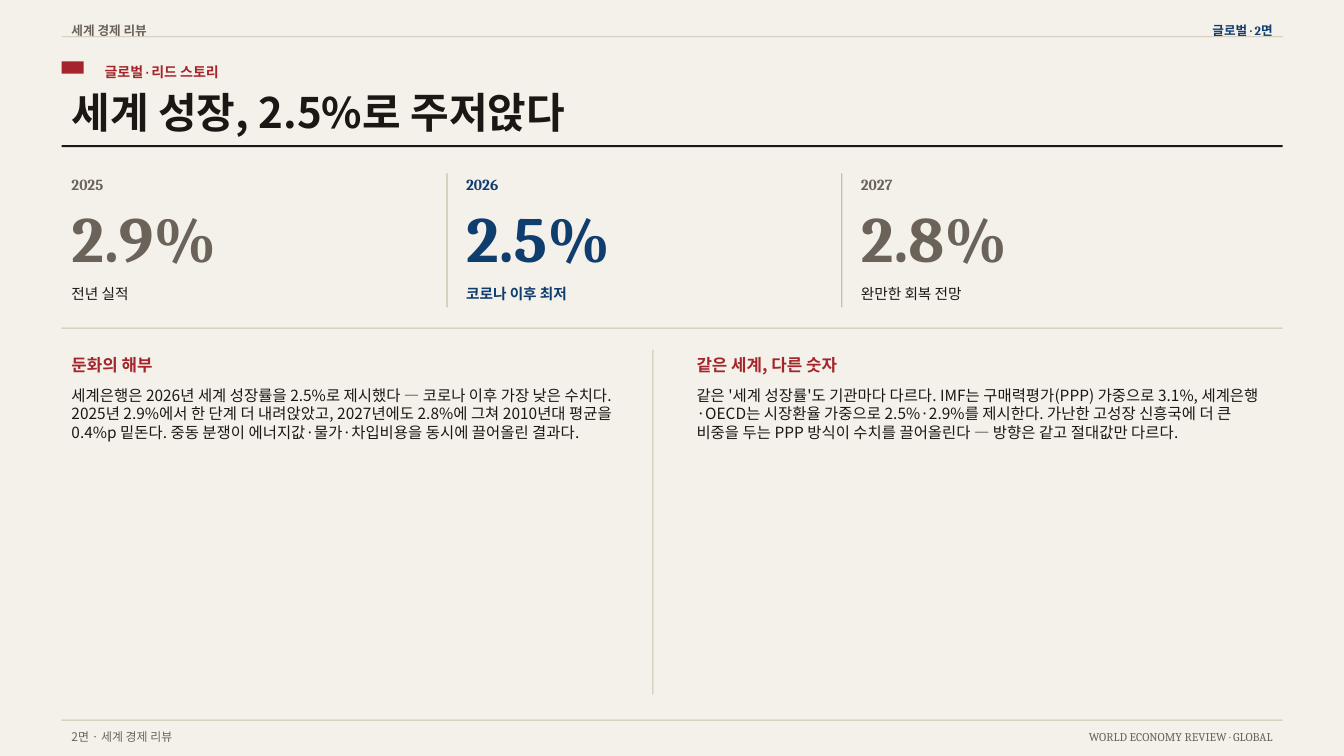
"""Builds the lead-story page of a world economy review."""
from pptx import Presentation
from pptx import util as u
from pptx.dml.color import RGBColor
from pptx.enum import shapes, text

PAPER = RGBColor(0xF4, 0xF1, 0xEA)
RULE = RGBColor(0xC9, 0xC0, 0xAE)
INK = RGBColor(0x1A, 0x17, 0x14)
GREY = RGBColor(0x6B, 0x63, 0x59)
NAVY = RGBColor(0x0F, 0x3D, 0x6E)
RED = RGBColor(0xA4, 0x26, 0x2C)
SERIF, SANS = "Cambria", "Noto Sans CJK KR"

WIDTH, HEIGHT = u.Inches(13.33), u.Inches(7.5)
LEFT, SPAN = 4.58, 90.85
RIGHT = LEFT + SPAN
STAT_PITCH = 29.37
HAIR_W, HAIR_H = 0.08, 0.13

STATS = [
    ("2025", "2.9%", "전년 실적", 6.3, False),
    ("2026", "2.5%", "코로나 이후 최저", 10.05, True),
    ("2027", "2.8%", "완만한 회복 전망", 10.05, False),
]
STORIES = [
    (LEFT, "둔화의 해부", 8.25, 42.69, 11.2,
     "세계은행은 2026년 세계 성장률을 2.5%로 제시했다 — 코로나 이후 가장 낮은 "
     "수치다. 2025년 2.9%에서 한 단계 더 내려앉았고, 2027년에도 2.8%에 그쳐 "
     "2010년대 평균을 0.4%p 밑돈다. 중동 분쟁이 에너지값·물가·차입비용을 동시에 "
     "끌어올린 결과다."),
    (51.09, "같은 세계, 다른 숫자", 13.28, 44.41, 8.8,
     "같은 '세계 성장률'도 기관마다 다르다. IMF는 구매력평가(PPP) 가중으로 3.1%, "
     "세계은행·OECD는 시장환율 가중으로 2.5%·2.9%를 제시한다. 가난한 고성장 "
     "신흥국에 더 큰 비중을 두는 PPP 방식이 수치를 끌어올린다 — 방향은 같고 "
     "절대값만 다르다."),
]


def share(x, y, w, h):
    """Turn percentages of the slide's width and height into lengths."""
    return [u.Emu(round(part * whole / 100))
            for part, whole in zip((x, y, w, h), (WIDTH, HEIGHT) * 2)]


def add_block(slide, x, y, w, h, colour):
    """Add a plain filled rectangle, used for rules and the marker."""
    block = slide.shapes.add_shape(shapes.MSO_SHAPE.RECTANGLE, *share(x, y, w, h))
    block.shadow.inherit = False
    block.fill.solid()
    block.fill.fore_color.rgb = colour
    block.line.fill.background()


def add_rule(slide, y, colour=RULE, h=HAIR_H):
    """Add a horizontal rule across the content width."""
    add_block(slide, LEFT, y, SPAN, h, colour)


def add_text(slide, x, y, w, h, words, size, face, colour,
             bold=True, wrap=False, align=None):
    """Add one paragraph of text in a box that grows with it."""
    frame = slide.shapes.add_textbox(*share(x, y, w, h)).text_frame
    frame.word_wrap = wrap
    frame.auto_size = text.MSO_AUTO_SIZE.SHAPE_TO_FIT_TEXT
    paragraph = frame.paragraphs[0]
    paragraph.alignment = align
    run = paragraph.add_run()
    run.text = words
    for key, value in {"size": u.Pt(size), "name": face, "bold": bold}.items():
        setattr(run.font, key, value)
    run.font.color.rgb = colour


def add_right_text(slide, y, w, h, *style, **options):
    """Add text that ends at the right margin."""
    add_text(slide, RIGHT - w, y, w, h, *style,
             align=text.PP_ALIGN.RIGHT, **options)


def add_masthead(slide):
    """Add the running head, section label and headline."""
    add_rule(slide, 4.8)
    add_text(slide, LEFT, 2.4, 7.88, 3.33, "세계 경제 리뷰", 9, SANS, GREY)
    add_right_text(slide, 2.4, 6.68, 3.33, "글로벌 · 2면", 9, SERIF, NAVY)
    add_block(slide, LEFT, 8.13, 1.65, 1.6, RED)
    add_text(slide, 7.05, 7.73, 11.1, 3.6, "글로벌 · 리드 스토리", 10, SERIF, RED)
    add_text(slide, LEFT, 10.8, 41.34, 8.13, "세계 성장, 2.5%로 주저앉다", 30, SANS, INK)
    add_rule(slide, 19.2, INK, 0.27)


def add_stat(slide, column, year, rate, note, note_width, focus):
    """Add one year's growth figure, with a divider before later columns."""
    x = LEFT + column * STAT_PITCH
    if column:
        add_block(slide, x - 0.73, 22.93, HAIR_W, 17.73, RULE)
    colour = NAVY if focus else GREY
    add_text(slide, x, 22.53, 4.5, 3.87, year, 11, SERIF, colour)
    add_text(slide, x, 25.6, 13.5, 11.73, rate, 46, SERIF, colour)
    add_text(slide, x, 37.07, note_width, 3.73, note, 10.5, SANS,
             NAVY if focus else INK, bold=focus)


def add_story(slide, x, heading, heading_width, width, height, body):
    """Add a headed column of body text."""
    add_text(slide, x, 46.27, heading_width, 4, heading, 12, SANS, RED)
    add_text(slide, x, 50.4, width, height, body, 11, SANS, INK,
             bold=False, wrap=True)


def add_footer(slide):
    """Add the foot rule, page label and publication line."""
    add_rule(slide, 95.2)
    add_text(slide, LEFT, 95.87, 9.75, 3.2, "2면 · 세계 경제 리뷰", 8.5, SANS, GREY, bold=False)
    add_right_text(slide, 95.87, 17.7, 3.2, "WORLD ECONOMY REVIEW · GLOBAL",
                   8.5, SERIF, GREY, bold=False)


def main():
    """Assemble the page and save it."""
    deck = Presentation()
    deck.slide_width, deck.slide_height = WIDTH, HEIGHT
    slide = deck.slides.add_slide(deck.slide_layouts[6])
    slide.background.fill.solid()
    slide.background.fill.fore_color.rgb = PAPER
    add_masthead(slide)
    for column, stat in enumerate(STATS):
        add_stat(slide, column, *stat)
    add_rule(slide, 43.33)
    add_block(slide, 48.54, 46.27, HAIR_W, 45.6, RULE)
    for story in STORIES:
        add_story(slide, *story)
    add_footer(slide)
    deck.save("out.pptx")


if __name__ == "__main__":
    main()
